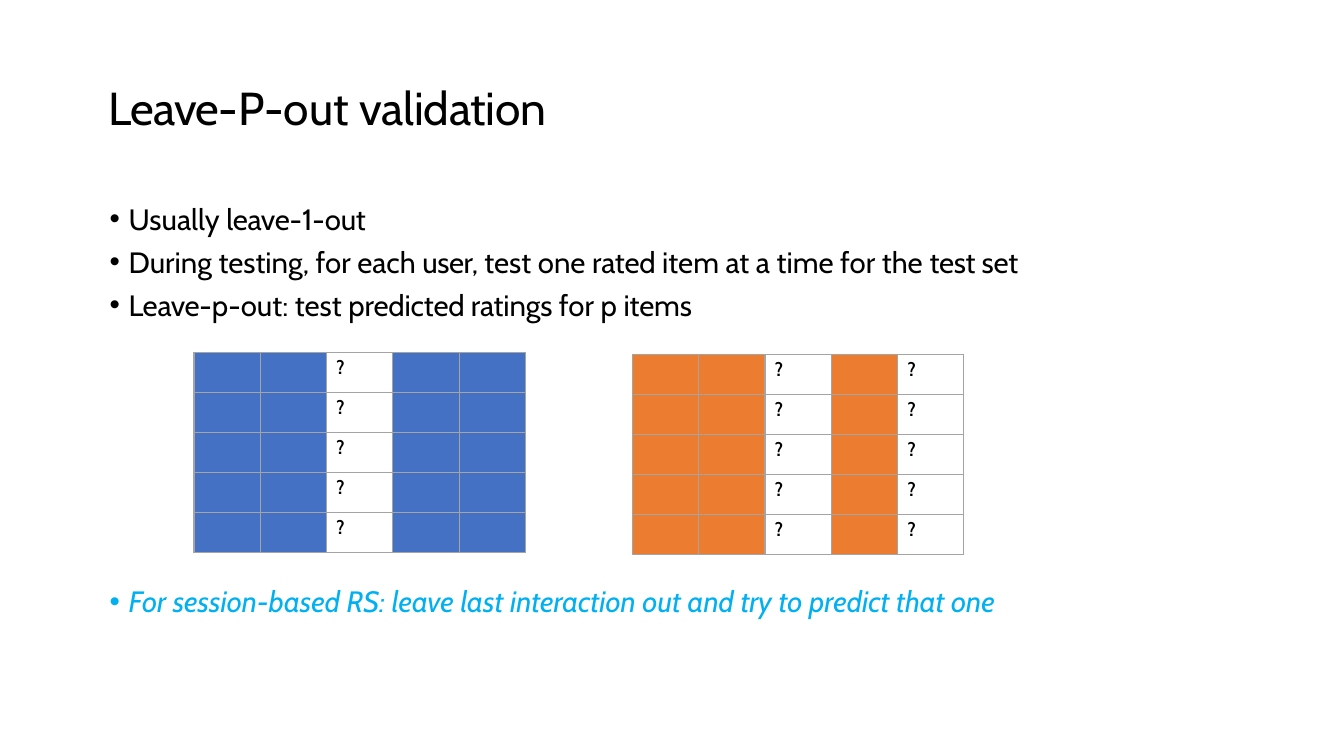
from lxml.etree import SubElement
from pptx import Presentation
from pptx.dml.color import RGBColor
from pptx.enum.text import MSO_ANCHOR, MSO_AUTO_SIZE, PP_ALIGN
from pptx.oxml.ns import qn
from pptx.util import Cm, Pt

FONT = "Cabin"
COLORS = {"text": "000000", "note": "00B0F0", "blue": "4471C4",
          "orange": "EC7C30", "grid": "A4A4A4"}

# Runs are (text, letter spacing in points)
TITLE = [("Leave-", -0.5), ("P-", -0.3), ("out ", 0), ("validation", -0.2)]

# Bullets are (space before in points, line spacing, colour, italic, runs)
BULLETS = [
    (6.4, 1.0, "text", False,
     [("Usually ", 0), ("leave-", -0.2), ("1-", 0), ("out", -0.2)]),
    (8.3, Pt(22.7), "text", False,
     [("During testing, for each ", 0), ("user, ", -0.3), ("test one ", 0),
      ("rated ", -0.1), ("item at a time for the ", 0), ("test set", -0.2)]),
    (5.2, 1.0, "text", False,
     [("Leave-", -0.2), ("p-out: test ", 0), ("predicted ratings ", -0.1),
      ("for p ", 0), ("items", -0.1)]),
    (186.6, 1.0, "note", True,
     [("For session-based RS: leave last interaction out "
       "and try to predict that one", 0)]),
]

# Grids are (left, top, fill, columns left out)
GRIDS = [(4.89, 8.88, "blue", {2}), (15.94, 8.93, "orange", {2, 4})]
SIZE = 5
COL, ROW = 1.67, 1.01


def color(name):
    return RGBColor.from_string(COLORS[name])


def add_runs(para, runs, size, tint="text", bold=False, italic=False):
    for text, gap in runs:
        run = para.add_run()
        run.text = text
        font = run.font
        font.name, font.size = FONT, Pt(size)
        font.bold, font.italic = bold, italic
        font.color.rgb = color(tint)
        font._element.set("spc", str(round(gap * 100)))


def place(shape, left, top, width, height, inset):
    """Move a placeholder and align its text to the top left."""
    shape.left, shape.top = Cm(left), Cm(top)
    shape.width, shape.height = Cm(width), Cm(height)
    frame = shape.text_frame
    frame.margin_left = frame.margin_right = frame.margin_bottom = 0
    frame.margin_top = Cm(inset)
    frame.vertical_anchor = MSO_ANCHOR.TOP
    frame.auto_size = MSO_AUTO_SIZE.NONE
    frame.word_wrap = True
    return frame


def indent(para, left, first=0):
    props = para._p.get_or_add_pPr()
    props.set("marL", str(Cm(left)))
    props.set("indent", str(Cm(first)))
    return props


def add_title(slide):
    frame = place(slide.shapes.title, 2.74, 1.35, 28.4, 2.08, 0.66)
    para = frame.paragraphs[0]
    para.alignment = PP_ALIGN.LEFT
    para.space_before = Pt(1)
    add_runs(para, TITLE, 33)


def add_bullets(slide):
    frame = place(slide.placeholders[1], 2.74, 4.83, 24.92, 10.85, 0.23)
    for i, (before, line, tint, italic, runs) in enumerate(BULLETS):
        para = frame.add_paragraph() if i else frame.paragraphs[0]
        para.alignment = PP_ALIGN.LEFT
        para.space_before, para.line_spacing = Pt(before), line
        props = indent(para, 0.5, -0.48)
        SubElement(props, qn("a:buChar")).set("char", "•")
        add_runs(para, runs, 21, tint, italic=italic)


def add_border(cell):
    props = cell._tc.get_or_add_tcPr()
    for side in ("lnL", "lnR", "lnT", "lnB"):
        line = SubElement(props, qn(f"a:{side}"), w=str(Pt(1)))
        fill = SubElement(line, qn("a:solidFill"))
        SubElement(fill, qn("a:srgbClr"), val=COLORS["grid"])


def add_grid(slide, left, top, tint, out):
    table = slide.shapes.add_table(SIZE, SIZE, Cm(left), Cm(top),
                                   Cm(COL * SIZE), Cm(ROW * SIZE)).table
    table.first_row = table.horz_banding = False
    for col in table.columns:
        col.width = Cm(COL)
    for row in table.rows:
        row.height = Cm(ROW)
        for i, cell in enumerate(row.cells):
            cell.margin_left = cell.margin_right = cell.margin_bottom = 0
            cell.margin_top = Cm(0.1)
            add_border(cell)
            if i in out:
                cell.fill.background()
                para = cell.text_frame.paragraphs[0]
                para.space_before = Pt(2.8)
                indent(para, 0.25)
                add_runs(para, [("?", -0.5)], 13.5, bold=True)
            else:
                cell.fill.solid()
                cell.fill.fore_color.rgb = color(tint)


def main():
    deck = Presentation()
    deck.slide_width, deck.slide_height = Cm(33.87), Cm(19.05)
    slide = deck.slides.add_slide(deck.slide_layouts[1])
    add_title(slide)
    add_bullets(slide)
    for grid in GRIDS:
        add_grid(slide, *grid)
    deck.save("out.pptx")


if __name__ == "__main__":
    main()
